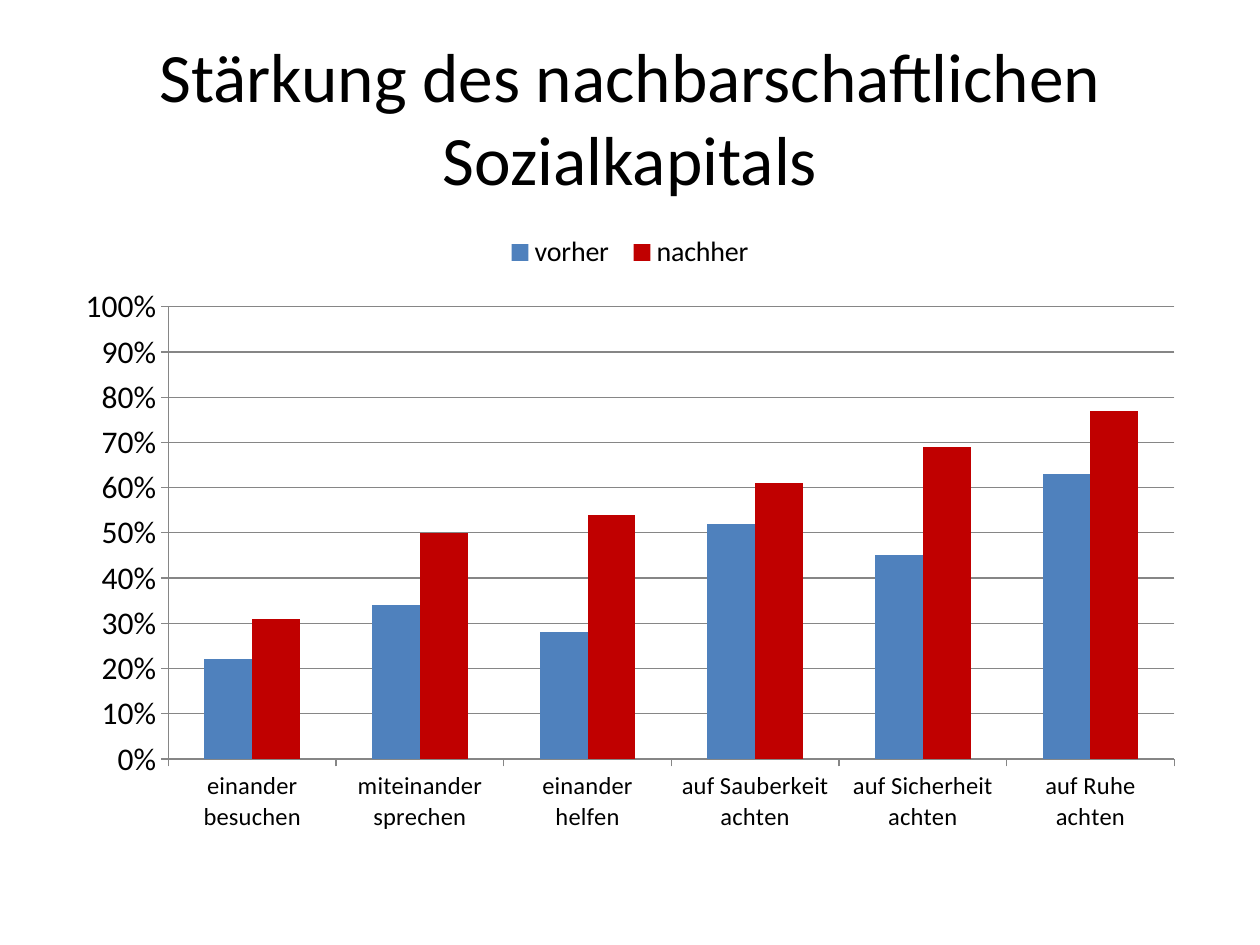
from dataclasses import dataclass

from pptx import Presentation
from pptx.chart.data import CategoryChartData
from pptx.dml.color import RGBColor
from pptx.enum.chart import XL_CHART_TYPE as ChartType
from pptx.enum.chart import XL_LEGEND_POSITION as LegendPosition
from pptx.enum.chart import XL_TICK_MARK as TickMark
from pptx.enum.text import MSO_ANCHOR as Anchor
from pptx.enum.text import MSO_AUTO_SIZE as AutoSize
from pptx.enum.text import PP_ALIGN as Align
from pptx.util import Cm, Pt

FONT = "Calibri"
BLACK = "000000"
GREY = "868686"


@dataclass
class Box:
    left: float
    top: float
    width: float
    height: float

    def lengths(self) -> list:
        return [Cm(value) for value in (self.left, self.top, self.width, self.height)]


@dataclass
class Survey:
    name: str
    color: str
    shares: list[float]


CATEGORIES = [
    "einander besuchen",
    "miteinander sprechen",
    "einander helfen",
    "auf Sauberkeit achten",
    "auf Sicherheit achten",
    "auf Ruhe achten",
]
SURVEYS = [
    Survey("vorher ", "4F81BD", [0.22, 0.34, 0.28, 0.52, 0.45, 0.63]),
    Survey("nachher", "C00000", [0.31, 0.5, 0.54, 0.61, 0.69, 0.77]),
]


def set_color(color_format, color: str) -> None:
    color_format.rgb = RGBColor.from_string(color)


def style_font(font, size: float) -> None:
    font.name = FONT
    font.size = Pt(size)
    font.bold = False
    set_color(font.color, BLACK)


def style_line(line) -> None:
    line.width = Pt(0.75)
    line.fill.solid()
    set_color(line.fill.fore_color, GREY)


def style_axis(axis, size: float) -> None:
    axis.major_tick_mark = TickMark.OUTSIDE
    axis.minor_tick_mark = TickMark.NONE
    style_font(axis.tick_labels.font, size)
    style_line(axis.format.line)


def place_title(shape, text: str, box: Box) -> None:
    shape.left, shape.top, shape.width, shape.height = box.lengths()
    frame = shape.text_frame
    frame.text = text
    frame.word_wrap = True
    frame.auto_size = AutoSize.NONE
    frame.vertical_anchor = Anchor.MIDDLE
    paragraph = frame.paragraphs[0]
    paragraph.alignment = Align.CENTER
    style_font(paragraph.runs[0].font, 39.6)


def add_survey_chart(slide, surveys: list[Survey], box: Box) -> None:
    data = CategoryChartData(number_format="0%")
    data.categories = CATEGORIES
    for survey in surveys:
        data.add_series(survey.name, survey.shares)
    frame = slide.shapes.add_chart(ChartType.COLUMN_CLUSTERED, *box.lengths(), data)
    chart = frame.chart
    chart.has_title = False
    style_font(chart.font, 18)

    chart.has_legend = True
    chart.legend.position = LegendPosition.TOP
    chart.legend.include_in_layout = False
    style_font(chart.legend.font, 16)

    style_axis(chart.category_axis, 14)
    value_axis = chart.value_axis
    style_axis(value_axis, 18)
    value_axis.minimum_scale = 0
    value_axis.maximum_scale = 1
    value_axis.major_unit = 0.1
    value_axis.has_major_gridlines = True
    style_line(value_axis.major_gridlines.format.line)
    value_axis.tick_labels.number_format = "0%"
    value_axis.tick_labels.number_format_is_linked = False

    plot = chart.plots[0]
    plot.gap_width = 150
    plot.overlap = 0
    plot.vary_by_categories = False
    for series, survey in zip(plot.series, surveys):
        series.invert_if_negative = False
        series.format.fill.solid()
        set_color(series.format.fill.fore_color, survey.color)


def main() -> None:
    presentation = Presentation()
    presentation.slide_width = Cm(25.4)
    presentation.slide_height = Cm(19.05)
    slide = presentation.slides.add_slide(presentation.slide_layouts[5])
    place_title(
        slide.shapes.title,
        "Stärkung des nachbarschaftlichen Sozialkapitals",
        Box(1.27, 0.76, 22.86, 3.18),
    )
    add_survey_chart(slide, SURVEYS, Box(1.27, 4.45, 22.86, 12.57))
    presentation.save("out.pptx")


if __name__ == "__main__":
    main()
